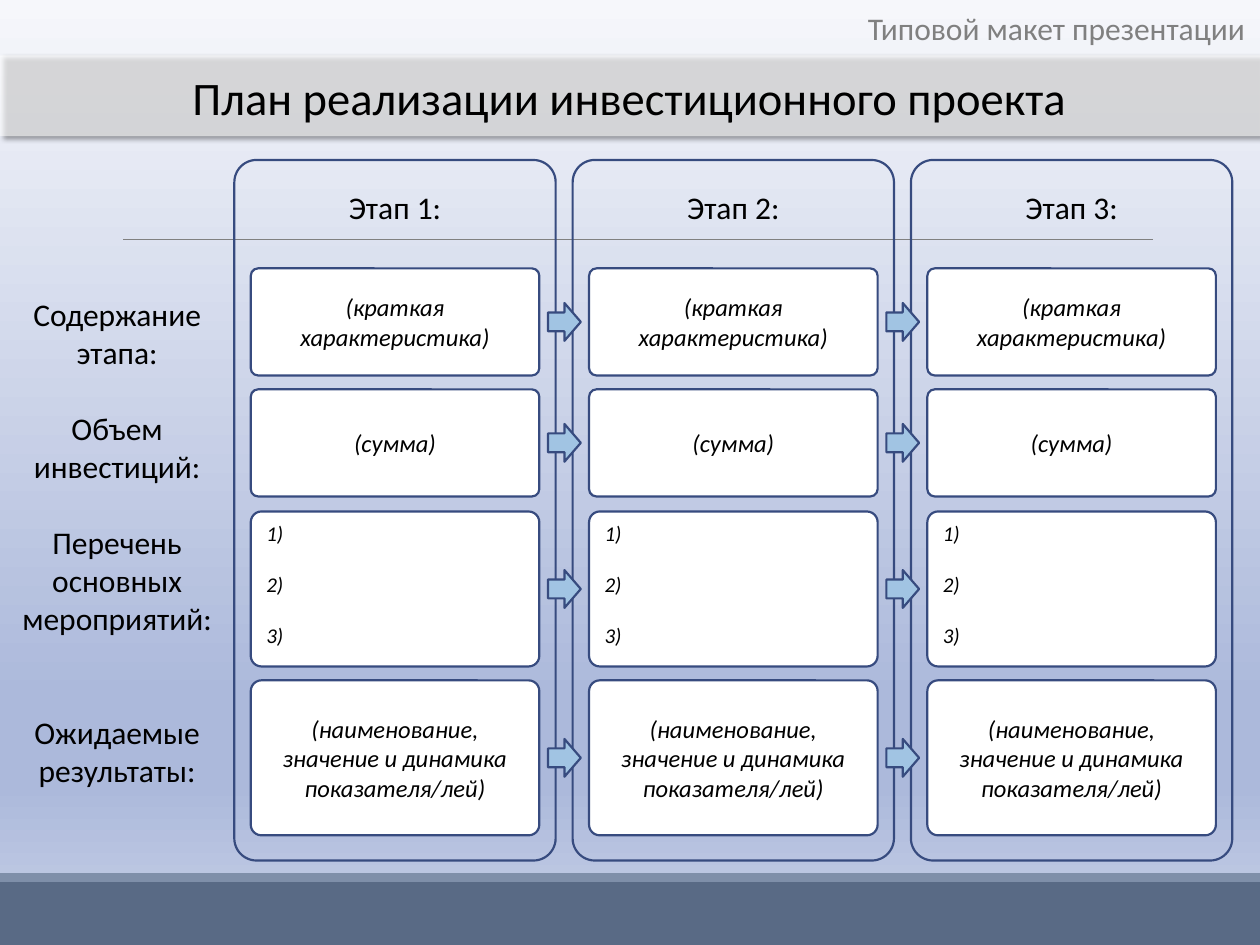
from copy import deepcopy
from dataclasses import dataclass

from lxml.etree import SubElement
from pptx import Presentation
from pptx.dml.color import RGBColor
from pptx.enum.shapes import MSO_CONNECTOR, MSO_SHAPE
from pptx.enum.text import MSO_ANCHOR, MSO_AUTO_SIZE, PP_ALIGN
from pptx.oxml.ns import qn
from pptx.util import Inches, Pt


@dataclass(frozen=True)
class Theme:
    font: str = "Calibri"
    text: str = "000000"
    muted: str = "808080"
    outline: str = "374B7F"
    arrow: str = "A1C4E3"
    card: str = "FFFFFF"
    footer: str = "596A85"
    footer_edge: str = "7F8FA9"
    background: tuple = ((0, "F6F7FB"), (0.74, "ACB9DB"), (0.83, "ACB9DB"), (1, "C8D1E7"))
    title_size: float = 26.6
    label_size: int = 18
    card_size: int = 14
    list_size: int = 12
    outline_width: float = 1.25
    corner: float = 0.069


class SlideBuilder:
    def __init__(self, page, theme):
        self.page = page
        self.theme = theme

    def background(self):
        fill = self.page.background.fill
        fill.gradient()
        fill.gradient_angle = 270
        stop_list = self.page._element.find(".//" + qn("a:gsLst"))
        while len(stop_list) < len(self.theme.background):
            stop_list.append(deepcopy(stop_list[0]))
        for stop, (position, color) in zip(fill.gradient_stops, self.theme.background):
            stop.position = position
            stop.color.rgb = RGBColor.from_string(color)

    def shape(self, kind, left, top, width, height, fill=None, outlined=True):
        shape = self.page.shapes.add_shape(
            kind, Inches(left), Inches(top), Inches(width), Inches(height))
        shape.shadow.inherit = False
        if fill:
            shape.fill.solid()
            shape.fill.fore_color.rgb = RGBColor.from_string(fill)
        else:
            shape.fill.background()
        if outlined:
            shape.line.color.rgb = RGBColor.from_string(self.theme.outline)
            shape.line.width = Pt(self.theme.outline_width)
        else:
            shape.line.fill.background()
        return shape

    def bar(self, top, height, fill):
        return self.shape(MSO_SHAPE.RECTANGLE, 0, top, 10, height, fill, outlined=False)

    def title_band(self, top, height):
        band = self.bar(top, height, self.theme.card)
        properties = band._element.spPr
        color = properties.find(".//" + qn("a:srgbClr"))
        SubElement(color, qn("a:alpha"), val="59000")
        effects = properties.find(qn("a:effectLst"))
        shadow = SubElement(effects, qn("a:outerShdw"), blurRad=str(Pt(3)),
                            dist=str(Pt(2)), dir="2700000", algn="tl", rotWithShape="0")
        shade = SubElement(shadow, qn("a:srgbClr"), val=self.theme.text)
        SubElement(shade, qn("a:alpha"), val="60000")

    def rounded(self, left, top, width, height, fill=None):
        box = self.shape(MSO_SHAPE.ROUNDED_RECTANGLE, left, top, width, height, fill)
        box.adjustments[0] = self.theme.corner
        return box

    def card(self, left, top, width, height, text, is_list):
        box = self.rounded(left, top, width, height, self.theme.card)
        box.text_frame.vertical_anchor = MSO_ANCHOR.TOP if is_list else MSO_ANCHOR.MIDDLE
        size = self.theme.list_size if is_list else self.theme.card_size
        align = PP_ALIGN.LEFT if is_list else PP_ALIGN.CENTER
        self.style_text(box.text_frame, text, size, align, italic=True)
        if is_list:
            for para in box.text_frame.paragraphs[:-1]:
                para.space_after = Pt(14.6)

    def arrow(self, left, top, width, height):
        self.shape(MSO_SHAPE.RIGHT_ARROW, left, top, width, height, self.theme.arrow)

    def rule(self, left, right, top):
        line = self.page.shapes.add_connector(
            MSO_CONNECTOR.STRAIGHT, Inches(left), Inches(top), Inches(right), Inches(top))
        line.line.color.rgb = RGBColor.from_string(self.theme.muted)
        line.line.width = Pt(0.5)
        SubElement(line._element.spPr, qn("a:effectLst"))

    def label(self, left, top, width, height, text, size=None, color=None,
              align=PP_ALIGN.CENTER):
        box = self.page.shapes.add_textbox(
            Inches(left), Inches(top), Inches(width), Inches(height))
        box.text_frame.auto_size = MSO_AUTO_SIZE.SHAPE_TO_FIT_TEXT
        self.style_text(box.text_frame, text, size or self.theme.label_size, align, color)
        return box.text_frame.paragraphs

    def style_text(self, frame, text, size, align, color=None, italic=False):
        frame.word_wrap = True
        frame.text = text
        for para in frame.paragraphs:
            para.alignment = align
            for span in para.runs:
                span.font.name = self.theme.font
                span.font.size = Pt(size)
                span.font.italic = italic
                span.font.color.rgb = RGBColor.from_string(color or self.theme.text)


def main():
    deck = Presentation()
    deck.slide_width, deck.slide_height = Inches(10), Inches(7.5)
    theme = Theme()
    builder = SlideBuilder(deck.slides.add_slide(deck.slide_layouts[6]), theme)

    builder.background()
    builder.bar(7, 0.5, theme.footer)
    builder.bar(6.93, 0.07, theme.footer_edge)
    builder.rule(0.98, 9.15, 1.9)
    builder.title_band(0.44, 0.64)
    builder.label(6.43, 0.02, 3.55, 0.4, "Типовой макет презентации",
                  color=theme.muted, align=PP_ALIGN.RIGHT)

    stage_lefts = [1.86 + 2.685 * index for index in range(3)]
    for number, left in enumerate(stage_lefts, 1):
        builder.rounded(left, 1.27, 2.55, 5.56)
        builder.label(left + 0.25, 1.44, 2.05, 0.4, f"Этап {number}:")

    row_labels = ["Содержание этапа:", "Объем инвестиций:",
                  "Перечень основных мероприятий:", "Ожидаемые результаты:"]
    label_paragraphs = builder.label(0, 2.29, 1.86, 4.04, "\n".join(row_labels))
    for para, gap in zip(label_paragraphs[1:], (22, 22, 44)):
        para.space_before = Pt(gap)

    rows = [
        (2.13, 0.85, "(краткая характеристика)", False),
        (3.09, 0.85, "(сумма)", False),
        (4.06, 1.23, "1)\n2)\n3)", True),
        (5.4, 1.23, "(наименование, значение и динамика показателя/лей)", False),
    ]
    for top, height, text, is_list in rows:
        for left in stage_lefts:
            builder.card(left + 0.13, top, 2.29, height, text, is_list)
        for left in stage_lefts[:-1]:
            builder.arrow(left + 2.49, top + (height - 0.3) / 2, 0.26, 0.3)

    title = builder.label(0.56, 0.51, 8.88, 0.54, "План реализации инвестиционного проекта",
                          theme.title_size)
    title[0].line_spacing = Pt(31)

    deck.save("out.pptx")


if __name__ == "__main__":
    main()
